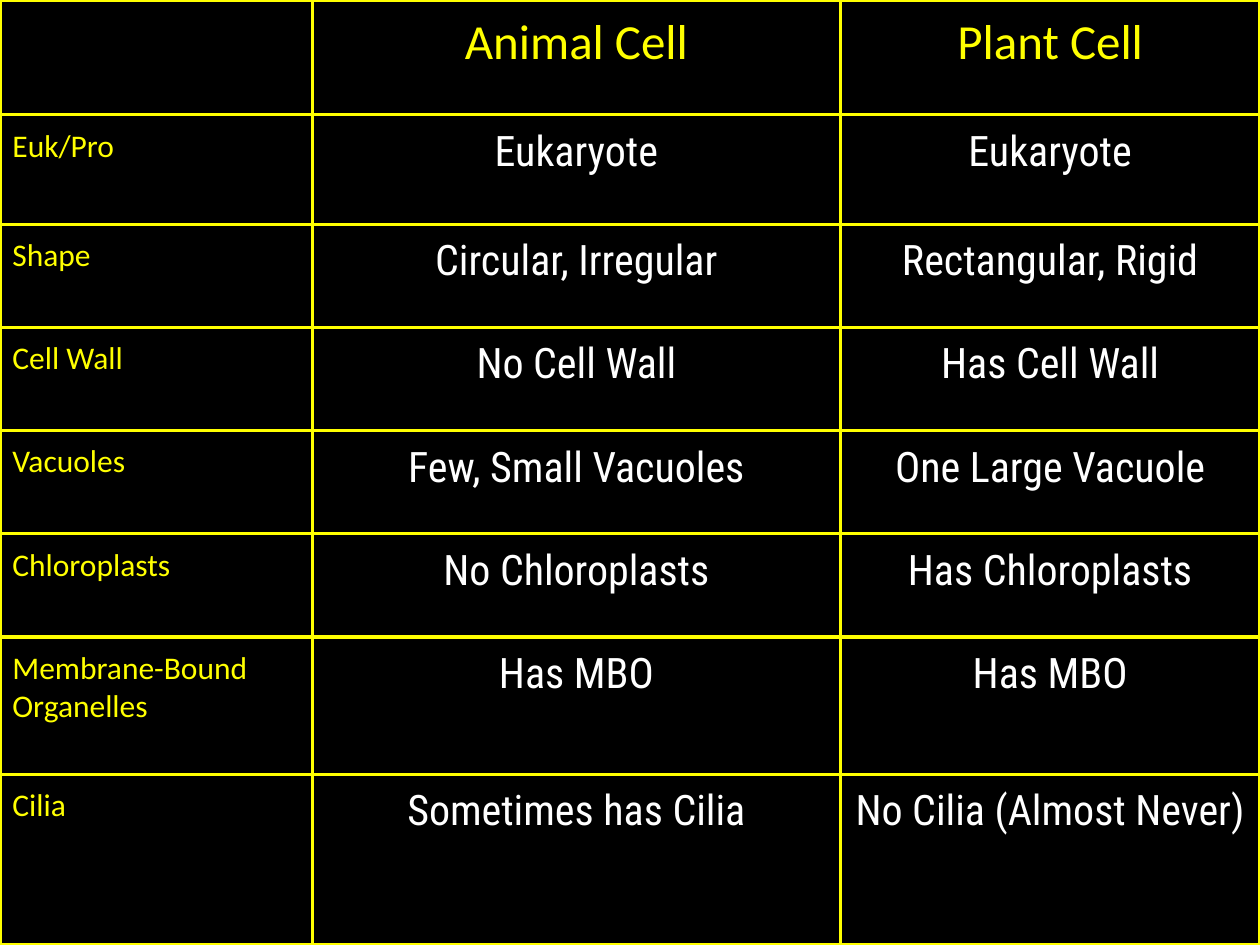
from lxml import etree
from pptx import Presentation
from pptx.dml.color import RGBColor
from pptx.enum.text import PP_ALIGN as Align
from pptx.oxml.ns import qn
from pptx.util import Cm, Pt

YELLOW, WHITE, BLACK, NAVY = "FFFF00", "FFFFFF", "000000", "073763"


def rgb(value):
    return RGBColor.from_string(value)


def add_borders(cell, color, width):
    tc_pr = cell._tc.get_or_add_tcPr()
    for side in ("lnL", "lnR", "lnT", "lnB"):
        ln = etree.SubElement(tc_pr, qn(f"a:{side}"), w=str(width))
        fill = etree.SubElement(ln, qn("a:solidFill"))
        etree.SubElement(fill, qn("a:srgbClr"), val=color)


rows = [
    ("", "Animal Cell", "Plant Cell"),
    ("Euk/Pro", "Eukaryote", "Eukaryote"),
    ("Shape", "Circular, Irregular", "Rectangular, Rigid"),
    ("Cell Wall", "No Cell Wall", "Has Cell Wall"),
    ("Vacuoles", "Few, Small Vacuoles", "One Large Vacuole"),
    ("Chloroplasts", "No Chloroplasts", "Has Chloroplasts"),
    ("Membrane-Bound Organelles", "Has MBO", "Has MBO"),
    ("Cilia", "Sometimes has Cilia", "No Cilia (Almost Never)"),
]
col_widths = [6.3, 10.64, 8.46]
row_heights = [2.31, 2.21] + [2.08] * 4 + [2.77, 3.44]

# Slide and background
prs = Presentation()
prs.slide_width, prs.slide_height = Cm(25.4), Cm(19.05)
s = prs.slides.add_slide(prs.slide_layouts[6])
s.background.fill.solid()
s.background.fill.fore_color.rgb = rgb(NAVY)

# Comparison table
table = s.shapes.add_table(len(rows), len(col_widths), 0, 0,
                           prs.slide_width, prs.slide_height).table
for column, width in zip(table.columns, col_widths):
    column.width = Cm(width)
for row, height in zip(table.rows, row_heights):
    row.height = Cm(height)

# Cells: yellow headings on top and at left, white facts elsewhere
for i, texts in enumerate(rows):
    for j, text in enumerate(texts):
        cell = table.cell(i, j)
        add_borders(cell, YELLOW, Pt(2.25))
        cell.fill.solid()
        cell.fill.fore_color.rgb = rgb(BLACK)
        cell.margin_left = cell.margin_right = Cm(0.25)
        cell.margin_top = cell.margin_bottom = Cm(0.25)
        if not text:
            continue
        if i == 0:
            font, size, color = "Calibri", 28, YELLOW
        elif j == 0:
            font, size, color = "Calibri", 18, YELLOW
        else:
            font, size, color = "Roboto Condensed", 24, WHITE
        p = cell.text_frame.paragraphs[0]
        p.alignment = Align.CENTER if j else Align.LEFT
        r = p.add_run()
        r.text = text
        r.font.name, r.font.size, r.font.bold = font, Pt(size), False
        r.font.color.rgb = rgb(color)

prs.save("out.pptx")
